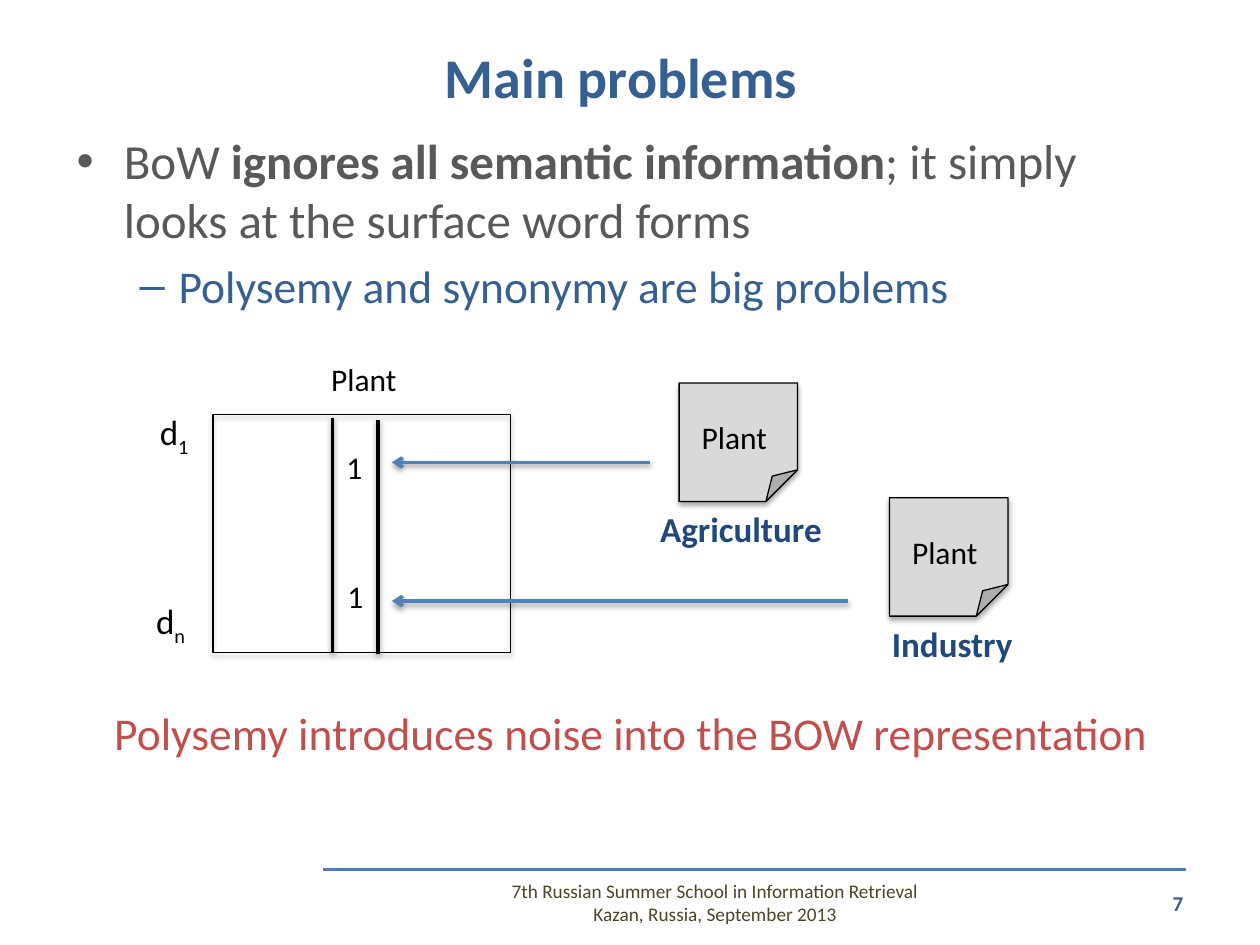
"""Build the slide on how polysemy harms the bag-of-words representation."""
from dataclasses import dataclass

from lxml.etree import SubElement
from pptx import Presentation
from pptx.dml.color import RGBColor
from pptx.enum.shapes import MSO_CONNECTOR, MSO_SHAPE
from pptx.enum.text import MSO_ANCHOR, PP_ALIGN
from pptx.oxml.ns import qn
from pptx.util import Emu, Inches, Pt

LEFT, CENTER, RIGHT = PP_ALIGN.LEFT, PP_ALIGN.CENTER, PP_ALIGN.RIGHT
TOP, MIDDLE = MSO_ANCHOR.TOP, MSO_ANCHOR.MIDDLE
RECTANGLE, FOLDED = MSO_SHAPE.RECTANGLE, MSO_SHAPE.FOLDED_CORNER
STRAIGHT = MSO_CONNECTOR.STRAIGHT
FONT = "Calibri"
COLORS = {
    "black": "000000", "heading": "376092", "body": "595959",
    "warning": "C0504D", "footer": "4A452A", "topic": "1F497D",
    "sheet": "D9D9D9", "arrow": "4F81BD", "rule": "4B7EBC",
}
WIDTH, HEIGHT = Inches(10), Inches(7.5)
COLUMNS, ROWS = 100, 75
SHEET_SIDE = 9.4


@dataclass(frozen=True)
class Area:
    column: float
    row: float
    columns: float
    rows: float

    def lengths(self) -> tuple[Emu, Emu, Emu, Emu]:
        return (across(self.column), down(self.row),
                across(self.columns), down(self.rows))


@dataclass(frozen=True)
class Span:
    text: str
    bold: bool = False
    baseline: int = 0


@dataclass(frozen=True)
class Paragraph:
    spans: tuple[Span, ...]
    size: float
    color: str = "black"
    align: PP_ALIGN = LEFT
    bullet: str = ""
    margin: float = 0
    hanging: float = 0
    before: float = 0


@dataclass(frozen=True)
class Label:
    area: Area
    paragraphs: tuple[Paragraph, ...]
    anchor: MSO_ANCHOR = TOP
    wrap: bool = False


@dataclass(frozen=True)
class Line:
    start: tuple[float, float]
    end: tuple[float, float]
    color: str = "black"
    width: float = 2
    arrow: bool = False
    shadow: bool = True


@dataclass(frozen=True)
class Sheet:
    column: float
    row: float
    topic: str
    topic_columns: float


def across(columns: float) -> Emu:
    return Emu(round(WIDTH * columns / COLUMNS))


def down(rows: float) -> Emu:
    return Emu(round(HEIGHT * rows / ROWS))


def rgb(name: str) -> RGBColor:
    return RGBColor.from_string(COLORS[name])


def add_shadow(effects, blur: float, distance: float, opacity: int) -> None:
    shadow = SubElement(effects, qn("a:outerShdw"), blurRad=str(Pt(blur)),
                        dist=str(Pt(distance)), dir="5400000", rotWithShape="0")
    color = SubElement(shadow, qn("a:srgbClr"), val=COLORS["black"])
    SubElement(color, qn("a:alpha"), val=str(opacity * 1000))


def draw_label(page, label: Label) -> None:
    box = page.shapes.add_textbox(*label.area.lengths())
    frame = box.text_frame
    frame.word_wrap = label.wrap
    frame.vertical_anchor = label.anchor
    for index, paragraph in enumerate(label.paragraphs):
        para = frame.add_paragraph() if index else frame.paragraphs[0]
        para.alignment = paragraph.align
        para.space_before = Pt(paragraph.before)
        if paragraph.bullet:
            properties = para._p.get_or_add_pPr()
            properties.set("marL", str(across(paragraph.margin)))
            properties.set("indent", str(-across(paragraph.hanging)))
            SubElement(properties, qn("a:buFont"), typeface="Arial")
            SubElement(properties, qn("a:buChar"), char=paragraph.bullet)
        for span in paragraph.spans:
            run = para.add_run()
            run.text = span.text
            run.font.name = FONT
            run.font.size = Pt(paragraph.size)
            run.font.bold = span.bold
            run.font.color.rgb = rgb(paragraph.color)
            if span.baseline:
                run._r.get_or_add_rPr().set("baseline", str(span.baseline * 1000))


def draw_line(page, line: Line) -> None:
    connector = page.shapes.add_connector(
        STRAIGHT, across(line.start[0]), down(line.start[1]),
        across(line.end[0]), down(line.end[1]))
    connector.line.color.rgb = rgb(line.color)
    connector.line.width = Pt(line.width)
    properties = connector._element.spPr
    if line.arrow:
        SubElement(properties.find(qn("a:ln")), qn("a:tailEnd"), type="arrow")
    effects = SubElement(properties, qn("a:effectLst"))
    if line.shadow:
        add_shadow(effects, 3.1, 1.6, 38)


def draw_shape(page, kind: MSO_SHAPE, area: Area, fill: str = ""):
    shape = page.shapes.add_shape(kind, *area.lengths())
    if fill:
        shape.fill.solid()
        shape.fill.fore_color.rgb = rgb(fill)
    else:
        shape.fill.background()
    shape.line.color.rgb = rgb("black")
    shape.line.width = Pt(0.75)
    shape.shadow.inherit = False
    add_shadow(shape._element.spPr.find(qn("a:effectLst")), 3.1, 1.8, 35)
    return shape


def draw_sheet(page, sheet: Sheet) -> None:
    shape = draw_shape(page, FOLDED, Area(sheet.column, sheet.row, SHEET_SIDE, SHEET_SIDE), "sheet")
    guides = next(shape._element.spPr.iter(qn("a:avLst")))
    SubElement(guides, qn("a:gd"), name="adj", fmla="val 26700")
    draw_label(page, Label(Area(sheet.column + 0.8, sheet.row + 2.3, 7.3, 4),
                           (Paragraph((Span("Plant"),), 18),)))
    topic_column = sheet.column + 0.35 + (SHEET_SIDE - sheet.topic_columns) / 2
    draw_label(page, Label(Area(topic_column, sheet.row + SHEET_SIDE, sheet.topic_columns, 4.4),
                           (Paragraph((Span(sheet.topic, bold=True),), 20, "topic"),)))


def document_name(index: str) -> tuple[Paragraph, ...]:
    return (Paragraph((Span("d"), Span(index, baseline=-25)), 20),)


POINTS = (
    Paragraph((Span("BoW "), Span("ignores all semantic information", bold=True),
               Span("; it simply looks at the surface word forms")),
              28, "body", LEFT, "•", 3.75, 3.75, 5.6),
    Paragraph((Span("Polysemy and synonymy are big problems"),),
              26, "heading", LEFT, "–", 8.1, 3.1, 5.2),
)
CONCLUSION = Paragraph((Span("Polysemy introduces noise into the BOW representation"),),
                       26, "warning", CENTER)
EVENT = "7th Russian Summer School in Information Retrieval Kazan, Russia, September 2013"
ONE = (Paragraph((Span("1"),), 18),)
LABELS = (
    Label(Area(4.3, 2.2, 90, 7.7),
          (Paragraph((Span("Main problems", bold=True),), 32, "heading", CENTER),), MIDDLE, True),
    Label(Area(5.1, 9.9, 90, 16), POINTS, wrap=True),
    Label(Area(5.1, 55.5, 90, 5.4), (CONCLUSION,), wrap=True),
    Label(Area(87.4, 69.7, 7.5, 4),
          (Paragraph((Span("7", bold=True),), 12, "heading", RIGHT),), MIDDLE, True),
    Label(Area(38.3, 69.6, 36.9, 4),
          (Paragraph((Span(EVENT),), 11, "footer", CENTER),), MIDDLE, True),
    Label(Area(25.3, 28.1, 7.3, 4), (Paragraph((Span("Plant"),), 18),)),
    Label(Area(11.7, 32.1, 4.4, 4.4), document_name("1")),
    Label(Area(11.4, 47.1, 4.5, 4.4), document_name("n")),
    Label(Area(26.5, 35.1, 3.3, 4), ONE),
    Label(Area(26.6, 45.3, 3.3, 4), ONE),
)
LINES = (
    Line((25.6, 69), (94.1, 69), "rule", 1.5, shadow=False),
    Line((26.4, 33.2), (26.4, 51.8)),
    Line((30, 33.3), (30, 51.9)),
    Line((51.6, 36.7), (31.1, 36.7), "arrow", arrow=True),
    Line((67.3, 47.7), (31.1, 47.7), "arrow", arrow=True),
)
SHEETS = (Sheet(53.9, 30.4, "Agriculture", 15.1), Sheet(70.6, 39.5, "Industry", 11.7))


def main() -> None:
    deck = Presentation()
    deck.slide_width, deck.slide_height = WIDTH, HEIGHT
    page = deck.slides.add_slide(deck.slide_layouts[6])
    draw_shape(page, RECTANGLE, Area(16.9, 32.9, 23.6, 18.9))
    for line in LINES:
        draw_line(page, line)
    for sheet in SHEETS:
        draw_sheet(page, sheet)
    for label in LABELS:
        draw_label(page, label)
    deck.save("out.pptx")


if __name__ == "__main__":
    main()
